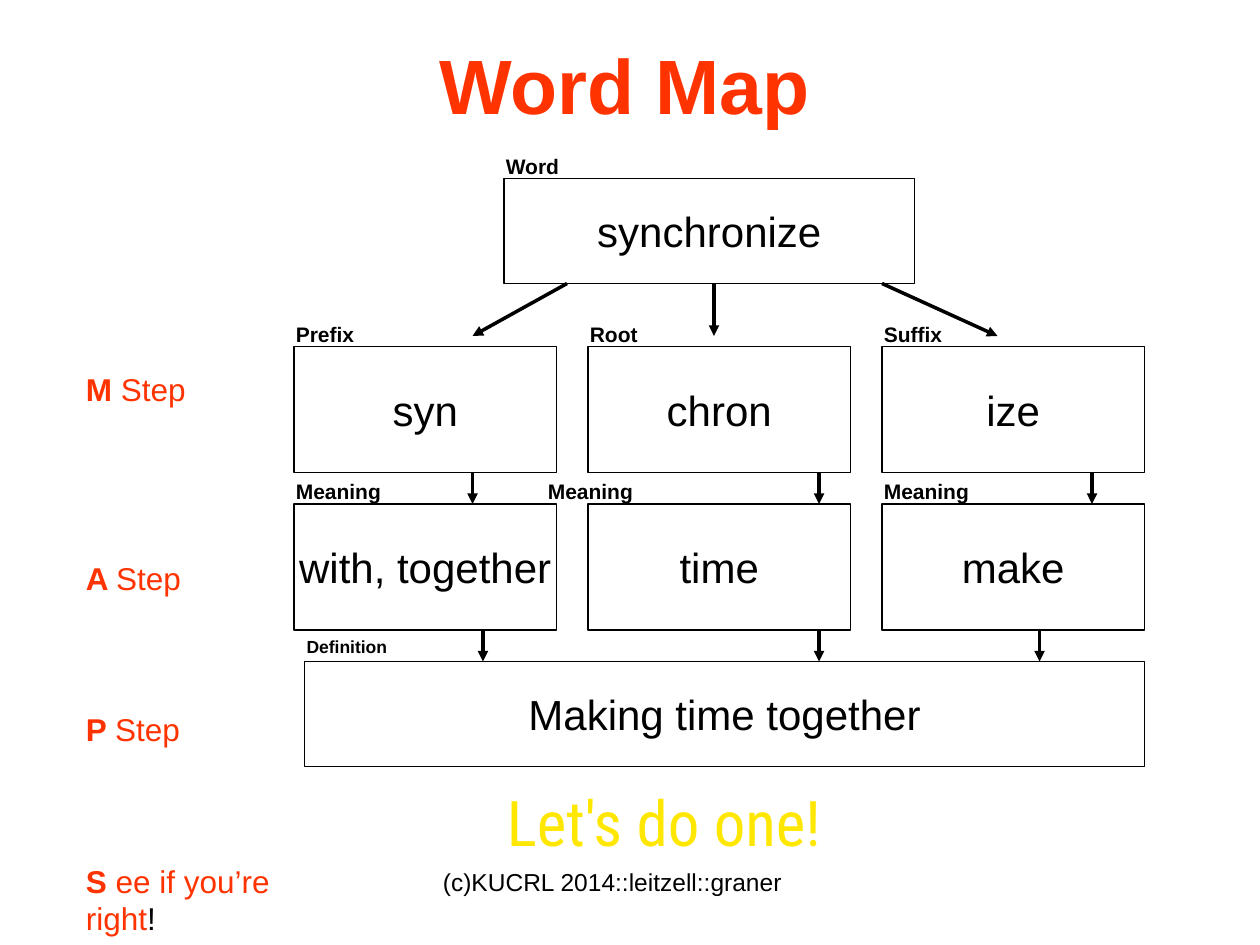
from lxml import etree
from pptx import Presentation
from pptx import util as u
from pptx.dml.color import RGBColor
from pptx.enum import shapes, text
from pptx.oxml.ns import qn

Pt = u.Pt
BLACK = RGBColor(0x00, 0x00, 0x00)
RED = RGBColor(0xFF, 0x33, 0x00)
YELLOW = RGBColor(0xFF, 0xE7, 0x01)
ORANGE = RGBColor(0xFE, 0x3E, 0x02)

TITLE = dict(name="Arial", size=Pt(44), bold=True)
BOX = dict(name="Arial", size=Pt(24), bold=False)
LABEL = dict(name="Arial", size=Pt(12), bold=True)
SMALL_LABEL = LABEL | dict(size=Pt(10))
STEP = dict(name="Arial", size=Pt(18), bold=False)
FOOTER = dict(name="Arial", size=Pt(14), bold=False)
CALL = dict(name="Roboto Condensed", size=Pt(36), bold=False)

COLUMN_LEFTS = [168 + 168 * column for column in range(3)]
LINE_HEIGHT = 21.6


def add_run(paragraph, words, style, color=BLACK):
    run = paragraph.add_run()
    run.text = words
    for key, value in style.items():
        setattr(run.font, key, value)
    run.font.color.rgb = color
    return run


def place(shape, left, top, width, height):
    values = dict(left=left, top=top, width=width, height=height)
    for key, value in values.items():
        setattr(shape, key, Pt(value))


def add_text_box(slide, left, top, width, height):
    shape = slide.shapes.add_textbox(Pt(left), Pt(top), Pt(width), Pt(height))
    shape.text_frame.word_wrap = True
    return shape


def add_title(slide, left, top, width, height):
    title = slide.shapes.title
    place(title, left, top, width, height)
    frame = title.text_frame
    frame.auto_size = text.MSO_AUTO_SIZE.NONE
    frame.vertical_anchor = text.MSO_ANCHOR.MIDDLE
    paragraph = frame.paragraphs[0]
    paragraph.alignment = text.PP_ALIGN.CENTER
    add_run(paragraph, "Word Map", TITLE, RED)


def fill_label(shape, words, style):
    """Write a label with a hanging indent and no bullet."""
    frame = shape.text_frame
    frame.auto_size = text.MSO_AUTO_SIZE.NONE
    paragraph = frame.paragraphs[0]
    properties = paragraph._p.get_or_add_pPr()
    properties.set("marL", str(Pt(27)))
    properties.set("indent", str(Pt(-27)))
    etree.SubElement(properties, qn("a:buNone"))
    paragraph.space_before = Pt(0)
    add_run(paragraph, words, style)


def add_box(slide, words, left, top, width, height):
    shape = slide.shapes.add_shape(
        shapes.MSO_SHAPE.RECTANGLE, Pt(left), Pt(top), Pt(width), Pt(height))
    shape.shadow.inherit = False
    shape.fill.background()
    shape.line.color.rgb = BLACK
    shape.line.width = Pt(0.75)
    frame = shape.text_frame
    frame.word_wrap = False
    frame.vertical_anchor = text.MSO_ANCHOR.MIDDLE
    paragraph = frame.paragraphs[0]
    paragraph.alignment = text.PP_ALIGN.CENTER
    add_run(paragraph, words, BOX)


def add_labelled_box(slide, label, words, left, top, width, height, label_shift=-6):
    add_box(slide, words, left, top, width, height)
    label_box = add_text_box(slide, left + label_shift, top - 18, 72, 24)
    fill_label(label_box, label, LABEL)


def add_definition(slide, left, top, width, height):
    body = slide.placeholders[1]
    place(body, left - 6, top - 18, 72, 24)
    fill_label(body, "Definition", SMALL_LABEL)
    add_box(slide, "Making time together", left, top, width, height)


def add_arrow(slide, start_x, start_y, end_x, end_y):
    arrow = slide.shapes.add_connector(
        shapes.MSO_CONNECTOR.STRAIGHT,
        Pt(start_x), Pt(start_y), Pt(end_x), Pt(end_y))
    arrow.line.color.rgb = BLACK
    arrow.line.width = Pt(2)
    etree.SubElement(arrow.line._get_or_add_ln(), qn("a:tailEnd"), type="triangle")
    etree.SubElement(arrow._element.spPr, qn("a:effectLst"))


def add_word_map(slide):
    add_labelled_box(slide, "Word", "synchronize", 288, 102, 234.5, 60)
    parts = [("Prefix", "syn"), ("Root", "chron"), ("Suffix", "ize")]
    for left, (label, part) in zip(COLUMN_LEFTS, parts):
        add_labelled_box(slide, label, part, left, 198, 150, 72)
    meanings = [("with, together", -6), ("time", -30), ("make", -6)]
    for left, (meaning, shift) in zip(COLUMN_LEFTS, meanings):
        add_labelled_box(slide, "Meaning", meaning, left, 288, 150, 72, shift)
    add_definition(slide, 174, 378, 480, 60)

    for start_x, end_x in [(324, 270), (408, 408), (504, 570)]:
        add_arrow(slide, start_x, 162, end_x, 192)
    for top, positions in [(270, (270, 468, 624)), (360, (276, 468, 594))]:
        for x in positions:
            add_arrow(slide, x, top, x, top + 18)


def add_steps(slide, left, top, width, height):
    frame = add_text_box(slide, left, top, width, height).text_frame
    steps = [("M", " Step", 0), ("A ", "Step", 4), ("P ", "Step", 3),
             ("S ", "ee if you’re right", 3)]
    for index, (letter, rest, lines_before) in enumerate(steps):
        paragraph = frame.add_paragraph() if index else frame.paragraphs[0]
        paragraph.line_spacing = Pt(LINE_HEIGHT)
        paragraph.space_before = Pt(lines_before * LINE_HEIGHT)
        add_run(paragraph, letter, STEP | dict(bold=True), RED)
        add_run(paragraph, rest, STEP, RED)
    add_run(paragraph, "!", STEP)


def add_call(slide, left, top, width, height):
    """Add the closing line, with no side margins so that it stays on one line."""
    frame = add_text_box(slide, left, top, width, height).text_frame
    for key, value in dict(word_wrap=False, margin_left=0, margin_right=0).items():
        setattr(frame, key, value)
    paragraph = frame.paragraphs[0]
    paragraph.alignment = text.PP_ALIGN.CENTER
    fill = add_run(paragraph, "Let's do one!", CALL).font.fill
    fill.gradient()
    fill.gradient_angle = 270
    for stop, color in zip(fill.gradient_stops, (YELLOW, ORANGE)):
        stop.color.rgb = color


def add_footer(slide, left, top, width, height):
    footer = add_text_box(slide, left, top, width, height)
    add_run(footer.text_frame.paragraphs[0], "(c)KUCRL 2014::leitzell::graner", FOOTER)


def main():
    presentation = Presentation()
    presentation.slide_width = Pt(720)
    presentation.slide_height = Pt(540)
    slide = presentation.slides.add_slide(presentation.slide_layouts[1])
    add_title(slide, 54, 18, 606, 60)
    add_footer(slide, 246, 492, 228, 36)
    add_word_map(slide)
    add_steps(slide, 42, 208, 154, 312)
    add_call(slide, 288, 444, 183, 69)
    presentation.save("out.pptx")


if __name__ == "__main__":
    main()
